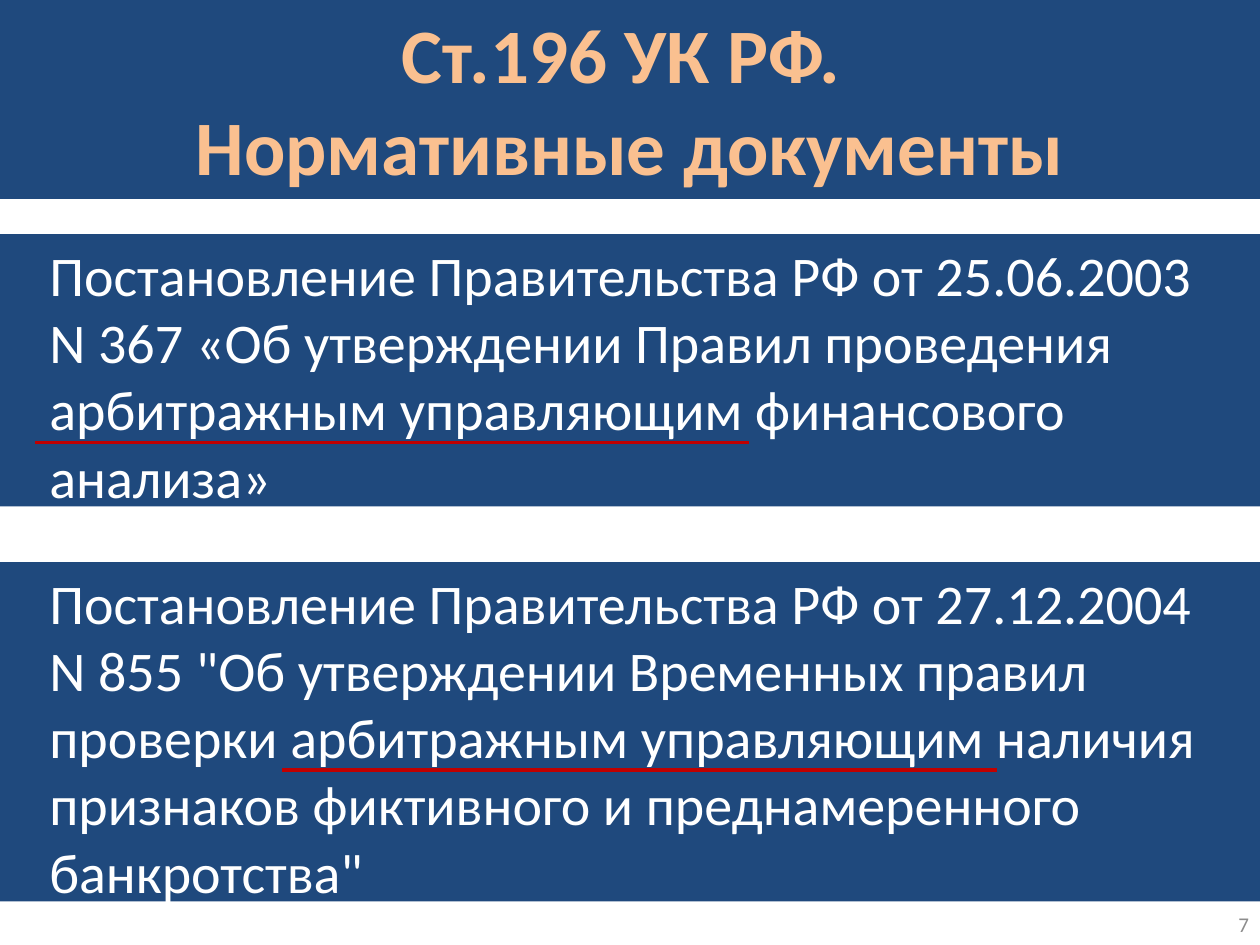
"""Builds a slide on the legal acts behind article 196."""
from dataclasses import dataclass
from typing import Any

from lxml.etree import SubElement
from pptx import Presentation
from pptx.dml.color import RGBColor
from pptx.enum.shapes import MSO_CONNECTOR
from pptx.enum.text import MSO_ANCHOR, MSO_AUTO_SIZE, PP_ALIGN
from pptx.oxml.ns import qn
from pptx.util import Cm, Pt

HUES = {"navy": "1F497D", "peach": "FAC090", "white": "FFFFFF",
        "red": "C00000", "gray": "8C8C8C"}
WIDTH = 25.4


def hue(name):
    return RGBColor.from_string(HUES[name])


def put(frame, text, size=32, color="white", bold=False,
        align=PP_ALIGN.LEFT, anchor=MSO_ANCHOR.TOP, indent=0):
    frame.text = text
    frame.word_wrap = True
    frame.vertical_anchor = anchor
    for para in frame.paragraphs:
        para.alignment = align
        para.space_before = Pt(0)
        props = para._p.get_or_add_pPr()
        props.set("marL", str(Cm(indent)))
        props.set("indent", "0")
        SubElement(props, qn("a:buNone"))
        font = para.runs[0].font
        font.name, font.size, font.bold = "Calibri", Pt(size), bold
        font.color.rgb = hue(color)


@dataclass
class Deck:
    slide: Any
    fill: str = "navy"
    rule: str = "red"
    weight: float = 2.25

    def band(self, slot, top, height, text, **style):
        shape = self.slide.placeholders[slot]
        shape.left, shape.top = Cm(0), Cm(top)
        shape.width, shape.height = Cm(WIDTH), Cm(height)
        shape.fill.solid()
        shape.fill.fore_color.rgb = hue(self.fill)
        put(shape.text_frame, text, **style)
        shape.text_frame.auto_size = MSO_AUTO_SIZE.SHAPE_TO_FIT_TEXT

    def line(self, left, right, top):
        stroke = self.slide.shapes.add_connector(
            MSO_CONNECTOR.STRAIGHT, Cm(left), Cm(top), Cm(right), Cm(top))
        stroke.line.color.rgb = hue(self.rule)
        stroke.line.width = Pt(self.weight)
        SubElement(stroke._element.spPr, qn("a:effectLst"))

    def label(self, left, top, width, height, text, **style):
        box = self.slide.shapes.add_textbox(
            Cm(left), Cm(top), Cm(width), Cm(height))
        put(box.text_frame, text, **style)


def main():
    prs = Presentation()
    prs.slide_width, prs.slide_height = Cm(WIDTH), Cm(19.05)
    deck = Deck(prs.slides.add_slide(prs.slide_layouts[3]))
    deck.label(19.51, 18.11, 5.92, 1.02, "7", size=12, color="gray",
               align=PP_ALIGN.RIGHT, anchor=MSO_ANCHOR.MIDDLE)
    deck.band(0, 0, 4.01, "Ст.196 УК РФ. \nНормативные документы",
              size=44, color="peach", bold=True, align=PP_ALIGN.CENTER)
    deck.band(1, 4.72, 5.74,
              "Постановление Правительства РФ от 25.06.2003\n"
              "N 367 «Об утверждении Правил проведения арбитражным "
              "управляющим финансового анализа»", indent=0.74)
    deck.band(2, 11.33, 7.09,
              "Постановление Правительства РФ от 27.12.2004\n"
              "N 855 \"Об утверждении Временных правил проверки арбитражным "
              "управляющим наличия признаков фиктивного и преднамеренного "
              "банкротства\"", indent=0.74)
    deck.line(0.71, 15.09, 8.92)
    deck.line(5.69, 20.09, 15.52)
    prs.save("out.pptx")


if __name__ == "__main__":
    main()
